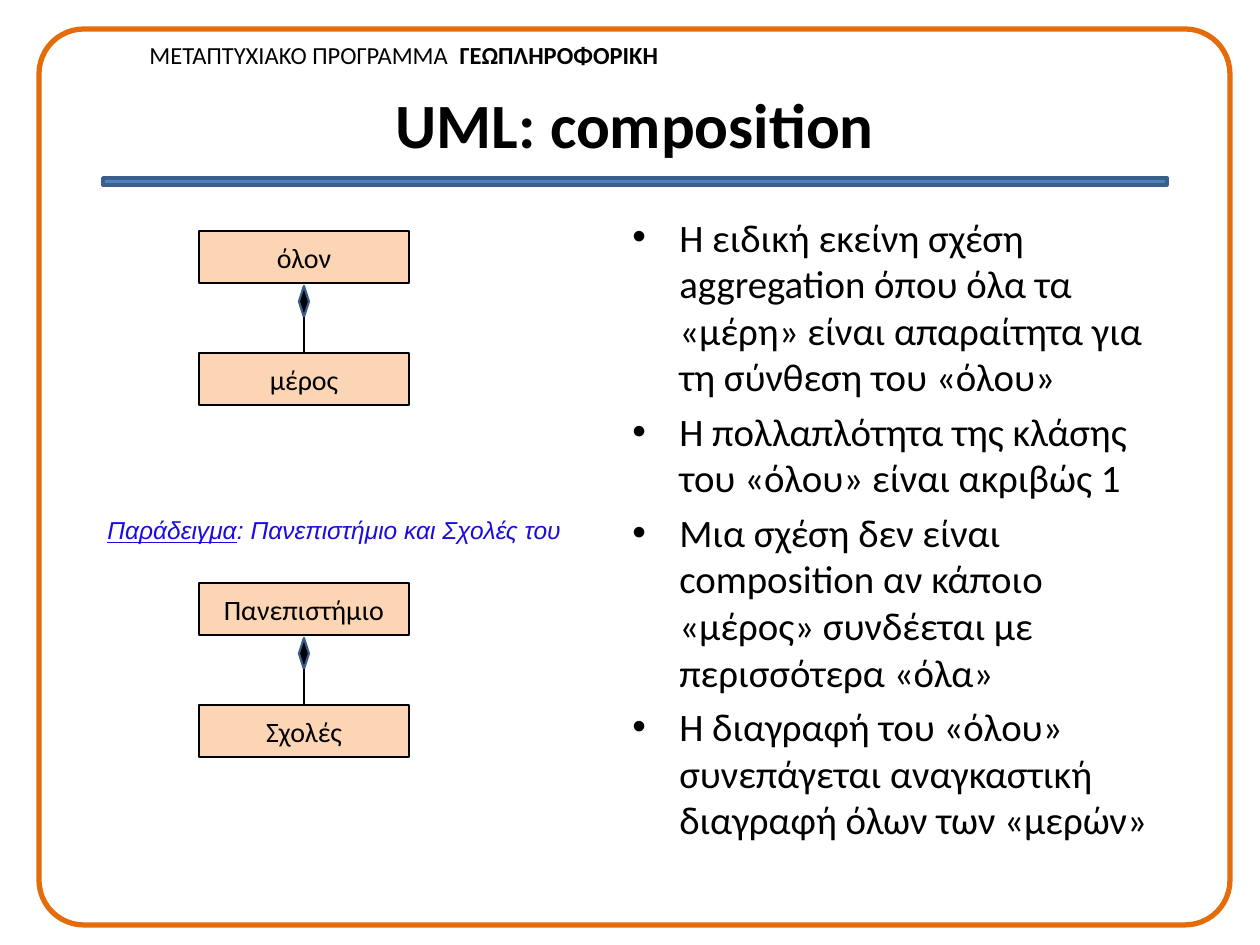
from dataclasses import dataclass

import lxml.etree
import pptx
import pptx.dml.color
import pptx.enum.shapes
import pptx.enum.text
import pptx.oxml.ns
import pptx.util

PX = 914400 / 126
BLACK = "000000"
BLUE_EDGE = "3A5F8C"
SHAPES = pptx.enum.shapes.MSO_SHAPE
ALIGN = pptx.enum.text.PP_ALIGN
ANCHOR = pptx.enum.text.MSO_ANCHOR


@dataclass
class Box:
    left: int
    top: int
    width: int
    height: int


@dataclass
class Composition:
    whole: str
    member: str
    top: int


COMPOSITIONS = [
    Composition("όλον", "μέρος", 231),
    Composition("Πανεπιστήμιο", "Σχολές", 583),
]
BULLETS = [
    "Η ειδική εκείνη σχέση aggregation όπου όλα τα «μέρη» είναι απαραίτητα για τη σύνθεση του «όλου»",
    "Η πολλαπλότητα της κλάσης του «όλου» είναι ακριβώς 1",
    "Μια σχέση δεν είναι composition αν κάποιο «μέρος» συνδέεται με περισσότερα «όλα»",
    "Η διαγραφή του «όλου» συνεπάγεται αναγκαστική διαγραφή όλων των «μερών»",
]


def px(length: int) -> int:
    return round(length * PX)


def rgb(colour: str) -> pptx.dml.color.RGBColor:
    return pptx.dml.color.RGBColor.from_string(colour)


def place(box: Box) -> list[int]:
    return [px(length) for length in (box.left, box.top, box.width, box.height)]


def set_font(paragraph, size: float, name: str = "Calibri", colour: str = BLACK) -> None:
    font = paragraph.font
    font.size = pptx.util.Pt(size)
    font.name = name
    font.color.rgb = rgb(colour)


def set_line(line, colour: str, width: float) -> None:
    line.color.rgb = rgb(colour)
    line.width = pptx.util.Pt(width)


def add_shape(slide, kind, box: Box, fill: str | None, edge: str, edge_width: float):
    shape = slide.shapes.add_shape(kind, *place(box))
    shape.shadow.inherit = False
    if fill:
        shape.fill.solid()
        shape.fill.fore_color.rgb = rgb(fill)
    else:
        shape.fill.background()
    set_line(shape.line, edge, edge_width)
    return shape


def add_text_frame(slide, box: Box, wrap: bool = True):
    frame = slide.shapes.add_textbox(*place(box)).text_frame
    frame.word_wrap = wrap
    return frame


def add_class(slide, name: str, box: Box) -> None:
    """Draw a UML class box with its name centred."""
    frame = add_shape(slide, SHAPES.RECTANGLE, box, "FCD5B5", BLACK, 1).text_frame
    frame.vertical_anchor = ANCHOR.MIDDLE
    paragraph = frame.paragraphs[0]
    paragraph.text = name
    paragraph.alignment = ALIGN.CENTER
    set_font(paragraph, 16)


def add_composition(slide, composition: Composition) -> None:
    """Draw the whole above its member, joined by a diamond and a line."""
    top, centre = composition.top, 304
    add_class(slide, composition.whole, Box(199, top, 210, 52))
    add_class(slide, composition.member, Box(199, top + 122, 210, 52))
    diamond = Box(centre - 5, top + 55, 10, 31)
    add_shape(slide, SHAPES.FLOWCHART_DECISION, diamond, BLACK, BLUE_EDGE, 1.25)
    connector = slide.shapes.add_connector(
        pptx.enum.shapes.MSO_CONNECTOR.STRAIGHT,
        px(centre), px(top + 86), px(centre), px(top + 122))
    set_line(connector.line, BLACK, 1.25)
    properties = connector._element.spPr
    lxml.etree.SubElement(properties, pptx.oxml.ns.qn("a:effectLst"))


def add_frame(slide) -> None:
    """Draw the programme header, the title rule and the orange border."""
    paragraph = add_text_frame(slide, Box(137, 34, 539, 43), wrap=False).paragraphs[0]
    paragraph.add_run().text = "ΜΕΤΑΠΤΥΧΙΑΚΟ ΠΡΟΓΡΑΜΜΑ  "
    programme = paragraph.add_run()
    programme.text = "ΓΕΩΠΛΗΡΟΦΟΡΙΚΗ"
    programme.font.bold = True
    set_font(paragraph, 14)
    add_shape(slide, SHAPES.RECTANGLE, Box(103, 178, 1064, 7), "4F81BD", BLUE_EDGE, 2)
    border = add_shape(slide, SHAPES.ROUNDED_RECTANGLE, Box(39, 29, 1191, 896), None, "E46C0A", 3)
    border.adjustments[0] = 0.05


def add_title(slide) -> None:
    frame = add_text_frame(slide, Box(68, 63, 1134, 120))
    frame.vertical_anchor = ANCHOR.MIDDLE
    paragraph = frame.paragraphs[0]
    paragraph.text = "UML: composition"
    paragraph.alignment = ALIGN.CENTER
    set_font(paragraph, 36)
    paragraph.font.bold = True


def add_bullets(slide) -> None:
    frame = add_text_frame(slide, Box(620, 207, 577, 675))
    for index, text in enumerate(BULLETS):
        paragraph = frame.add_paragraph() if index else frame.paragraphs[0]
        paragraph.text = text
        if index:
            paragraph.space_before = pptx.util.Pt(4.4)
        properties = paragraph._p.get_or_add_pPr()
        properties.set("marL", str(px(47)))
        properties.set("indent", str(px(-47)))
        bullet_font = lxml.etree.SubElement(properties, pptx.oxml.ns.qn("a:buFont"))
        bullet_font.set("typeface", "Arial")
        bullet = lxml.etree.SubElement(properties, pptx.oxml.ns.qn("a:buChar"))
        bullet.set("char", "•")
        set_font(paragraph, 22.2)


def add_example_caption(slide) -> None:
    paragraph = add_text_frame(slide, Box(95, 509, 481, 43), wrap=False).paragraphs[0]
    label = paragraph.add_run()
    label.text = "Παράδειγμα"
    label.font.underline = True
    paragraph.add_run().text = ": Πανεπιστήμιο και Σχολές του"
    set_font(paragraph, 14, "Arial", "1A0BDF")
    paragraph.font.italic = True


def main() -> None:
    presentation = pptx.Presentation()
    presentation.slide_width = px(1260)
    presentation.slide_height = px(945)
    slide = presentation.slides.add_slide(presentation.slide_layouts[6])
    add_frame(slide)
    add_title(slide)
    add_bullets(slide)
    for composition in COMPOSITIONS:
        add_composition(slide, composition)
    add_example_caption(slide)
    presentation.save("out.pptx")


if __name__ == "__main__":
    main()
